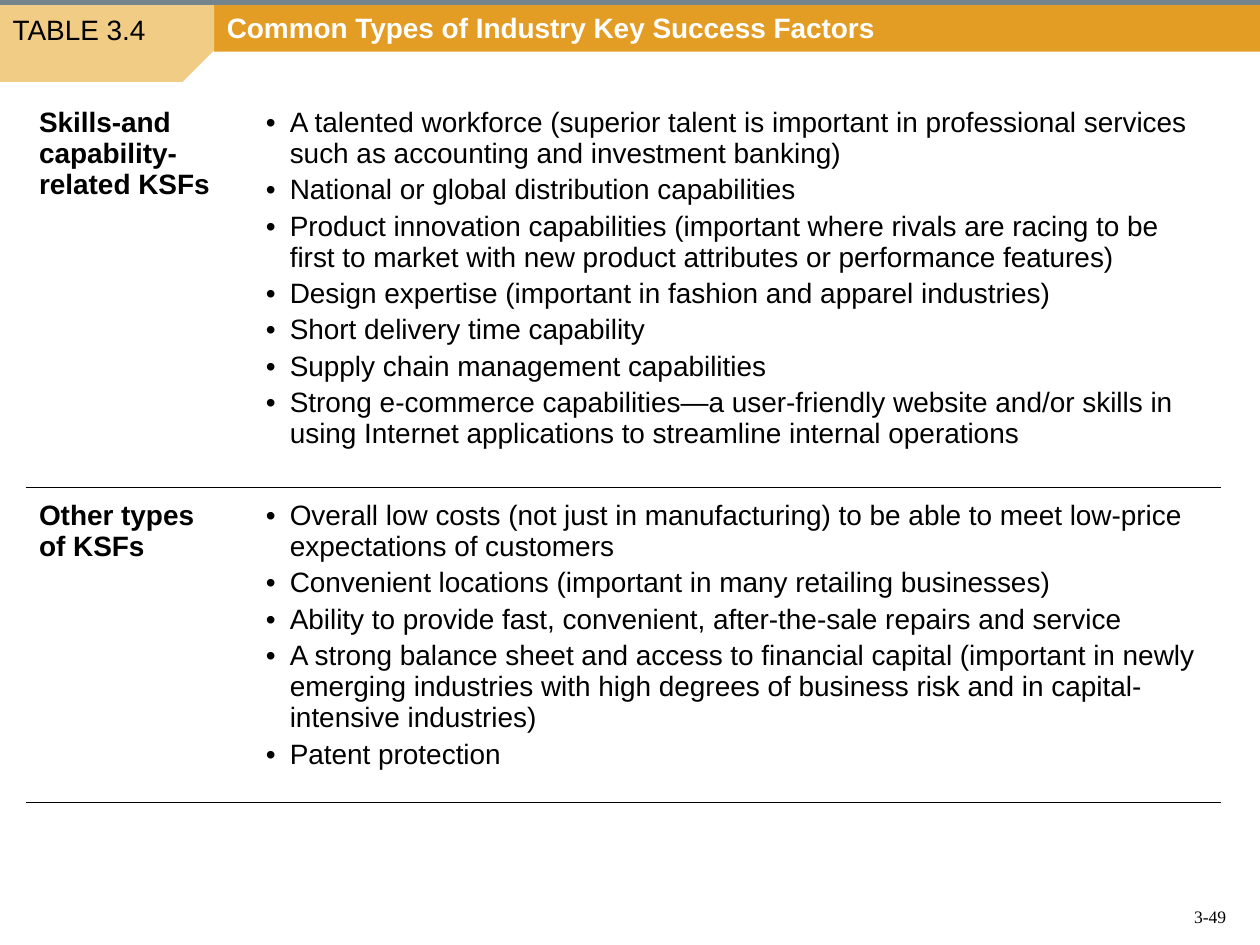
from lxml import etree
from pptx import Presentation
from pptx import util as u
from pptx.dml.color import RGBColor
from pptx.enum import shapes, text
from pptx.oxml.ns import qn

WIDTH, HEIGHT = 10, 7.5
TAB_WIDTH = 0.17 * WIDTH
BAND_TOP, BAND_HEIGHT, TAB_HEIGHT = 0.04, 0.37, 0.61
COLUMNS = (1.8, 7.68)
ROWS = (3.12, 2.5)
INDENT = 0.19
COLORS = {"band": "E49D24", "tab": "F0CC85", "rule": "74848D",
          "ink": "000000", "paper": "FFFFFF"}

FACTORS = [
    ("Skills-and capability-related KSFs", [
        "A talented workforce (superior talent is important in professional "
        "services such as accounting and investment banking)",
        "National or global distribution capabilities",
        "Product innovation capabilities (important where rivals are racing to be "
        "first to market with new product attributes or performance features)",
        "Design expertise (important in fashion and apparel industries)",
        "Short delivery time capability",
        "Supply chain management capabilities",
        "Strong e-commerce capabilities—a user-friendly website and/or skills in "
        "using Internet applications to streamline internal operations",
    ]),
    ("Other types \vof KSFs", [
        "Overall low costs (not just in manufacturing) to be able to meet "
        "low-price expectations of customers",
        "Convenient locations (important in many retailing businesses)",
        "Ability to provide fast, convenient, after-the-sale repairs and service",
        "A strong balance sheet and access to financial capital (important in newly "
        "emerging industries with high degrees of business risk and in "
        "capital-intensive industries)",
        "Patent protection",
    ]),
]


def color(name):
    return RGBColor.from_string(COLORS[name])


def inches(*lengths):
    return [u.Inches(length) for length in lengths]


def style(paragraph, size=16, ink="ink", bold=False, face="Arial"):
    font = paragraph.font
    font.size, font.bold, font.name = u.Pt(size), bold, face
    font.color.rgb = color(ink)


def add_panel(slide, kind, box, fill):
    panel = slide.shapes.add_shape(kind, *inches(*box))
    panel.shadow.inherit = False
    panel.fill.solid()
    panel.fill.fore_color.rgb = color(fill)
    panel.line.fill.background()
    return panel


def add_rule(slide, y):
    rule = slide.shapes.add_connector(
        shapes.MSO_CONNECTOR.STRAIGHT, *inches(0, y, WIDTH, y))
    rule.line.color.rgb = color("rule")
    rule.line.width = u.Pt(3)
    etree.SubElement(rule._element.spPr, qn("a:effectLst"))


def set_text(shape, words, side=0.1, anchor=text.MSO_ANCHOR.TOP,
             align=text.PP_ALIGN.LEFT, **look):
    frame = shape.text_frame
    frame.text = words
    frame.word_wrap = True
    frame.auto_size = text.MSO_AUTO_SIZE.NONE
    frame.vertical_anchor = anchor
    frame.margin_left = frame.margin_right = u.Inches(side)
    frame.margin_top = frame.margin_bottom = u.Inches(0.05)
    frame.paragraphs[0].alignment = align
    style(frame.paragraphs[0], **look)


def add_label(slide, box, words, **look):
    set_text(slide.shapes.add_textbox(*inches(*box)), words, **look)


def place_title(slide, box, words):
    title = slide.shapes.title
    title.left, title.top, title.width, title.height = inches(*box)
    set_text(title, words, ink="paper", bold=True)
    # Bring the title in front of the band
    slide.shapes._spTree.append(title._element)


def add_bullet(paragraph):
    paragraph.space_before = u.Pt(3)
    props = paragraph._p.get_or_add_pPr()
    props.set("marL", str(u.Inches(INDENT)))
    props.set("indent", str(-u.Inches(INDENT)))
    etree.SubElement(props, qn("a:buFont"), typeface="Arial")
    etree.SubElement(props, qn("a:buChar"), char="•")


def set_borders(cell, ruled):
    props = cell._tc.get_or_add_tcPr()
    for position, side in enumerate(("L", "R", "T", "B")):
        border = etree.Element(qn(f"a:ln{side}"), w=str(u.Pt(1)))
        if side in ruled:
            fill = etree.SubElement(border, qn("a:solidFill"))
            etree.SubElement(fill, qn("a:srgbClr"), val=COLORS["ink"])
        else:
            etree.SubElement(border, qn("a:noFill"))
        props.insert(position, border)


def fill_cell(cell, lines, ruled, bulleted):
    cell.fill.background()
    cell.margin_left = cell.margin_right = u.Inches(0.1)
    cell.margin_top = cell.margin_bottom = u.Inches(0.1)
    cell.text = "\n".join(lines)
    for paragraph in cell.text_frame.paragraphs:
        if bulleted:
            add_bullet(paragraph)
        style(paragraph, bold=not bulleted)
    set_borders(cell, ruled)


def add_factor_table(slide, left, top):
    box = inches(left, top, sum(COLUMNS), sum(ROWS))
    table = slide.shapes.add_table(len(ROWS), len(COLUMNS), *box).table
    table.first_row = table.horz_banding = False
    for column, width in zip(table.columns, COLUMNS):
        column.width = u.Inches(width)
    for index, (heading, factors) in enumerate(FACTORS):
        table.rows[index].height = u.Inches(ROWS[index])
        ruled = "TB" if index else "B"
        fill_cell(table.cell(index, 0), [heading], ruled, bulleted=False)
        fill_cell(table.cell(index, 1), factors, ruled, bulleted=True)


def main():
    deck = Presentation()
    deck.slide_width, deck.slide_height = inches(WIDTH, HEIGHT)
    slide = deck.slides.add_slide(deck.slide_layouts[5])

    # Header band, tab with a cut lower corner, and top rule
    add_panel(slide, shapes.MSO_SHAPE.RECTANGLE,
              (TAB_WIDTH, BAND_TOP, WIDTH - TAB_WIDTH, BAND_HEIGHT), "band")
    tab = add_panel(slide, shapes.MSO_SHAPE.SNIP_1_RECTANGLE,
                    (0, BAND_TOP, TAB_WIDTH, TAB_HEIGHT), "tab")
    tab.adjustments[0] = 0.41
    tab._element.spPr.xfrm.set("flipV", "1")
    add_rule(slide, BAND_TOP / 2)

    # Page number, table number and title
    add_label(slide, (7.43, 7.03, 2.4, 0.38), "3-49", size=10,
              face="Times New Roman", anchor=text.MSO_ANCHOR.BOTTOM,
              align=text.PP_ALIGN.RIGHT)
    add_label(slide, (0.1, 0.05, 1.31, BAND_HEIGHT), "TABLE 3.4", side=0)
    place_title(slide, (TAB_WIDTH, 0.03, 6.71, BAND_HEIGHT),
                "Common Types of Industry Key Success Factors")

    # Success factors
    add_factor_table(slide, 0.21, 0.75)
    deck.save("out.pptx")


if __name__ == "__main__":
    main()
